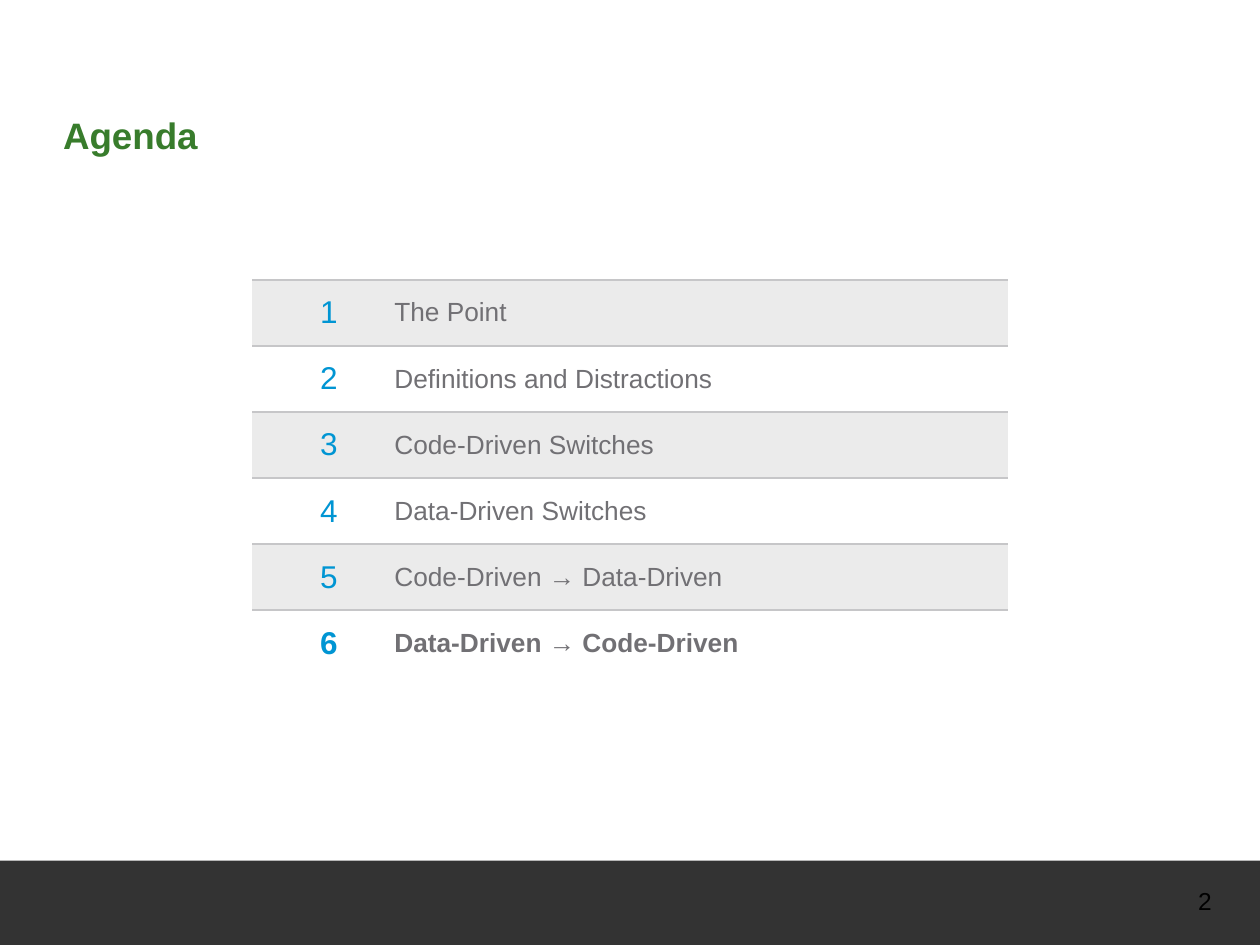
"""Build the agenda slide with its numbered table and footer bar."""
import pptx
import pptx.dml.color
import pptx.enum.shapes
import pptx.enum.text
import pptx.oxml
import pptx.oxml.ns
import pptx.util
from pptx.util import Inches

TITLE = "Agenda"
PAGE_NUMBER = "2"
TOPICS = [
    "The Point",
    "Definitions and Distractions",
    "Code-Driven Switches",
    "Data-Driven Switches",
    "Code-Driven → Data-Driven",
    "Data-Driven → Code-Driven",
]
CURRENT_TOPIC = 6
COLUMN_WIDTHS = (0.83, 5.17)
ROW_HEIGHT = 0.525

THEME = {
    "font": "Arial",
    "title": ("387C2C", 21),
    "number": ("0095D3", 18),
    "topic": ("717074", 15),
    "page": ("000000", 14),
    "bands": ("EBEBEB", "FFFFFF"),
    "rule": "C6C6C8",
    "rule_width": 1.5,
    "footer": "333333",
}
ALIGN = pptx.enum.text.PP_ALIGN
ANCHOR = pptx.enum.text.MSO_ANCHOR


def color(value):
    """Return an RGB colour."""
    return pptx.dml.color.RGBColor.from_string(value)


def write(frame, text, style, align=ALIGN.LEFT, bold=False):
    """Fill a text frame with one styled paragraph."""
    frame.text = text
    para = frame.paragraphs[0]
    para.alignment = align
    para.font.name = THEME["font"]
    value, size = THEME[style]
    para.font.size = pptx.util.Pt(size)
    para.font.color.rgb = color(value)
    para.font.bold = bold
    return para


def clear_margins(frame, anchor):
    """Remove the insets of a text frame and anchor its text."""
    frame.margin_left = frame.margin_right = 0
    frame.margin_top = frame.margin_bottom = 0
    frame.vertical_anchor = anchor
    frame.word_wrap = True


def set_borders(cell, ruled_sides):
    """Rule the given sides of a cell and clear the others."""
    properties = cell._tc.get_or_add_tcPr()
    width = pptx.util.Pt(THEME["rule_width"])
    for index, side in enumerate("LRTB"):
        paint = "<a:noFill/>"
        if side in ruled_sides:
            paint = f'<a:solidFill><a:srgbClr val="{THEME["rule"]}"/></a:solidFill>'
        namespace = pptx.oxml.ns.nsdecls("a")
        line = f'<a:ln{side} {namespace} w="{width}">{paint}</a:ln{side}>'
        properties.insert(index, pptx.oxml.parse_xml(line))


def add_footer(page):
    """Add the dark bar and the page number."""
    bar = page.shapes.add_shape(
        pptx.enum.shapes.MSO_SHAPE.RECTANGLE, 0, Inches(6.83), Inches(10), Inches(0.67)
    )
    bar.shadow.inherit = False
    bar.fill.solid()
    bar.fill.fore_color.rgb = color(THEME["footer"])
    bar.line.fill.background()
    box = page.shapes.add_textbox(Inches(9.51), Inches(7.07), Inches(0.37), Inches(0.16))
    clear_margins(box.text_frame, ANCHOR.MIDDLE)
    write(box.text_frame, PAGE_NUMBER, "page")


def add_title(page):
    """Place and format the title."""
    title = page.shapes.title
    title.left, title.top = Inches(0.5), Inches(0.36)
    title.width, title.height = Inches(9), Inches(0.89)
    clear_margins(title.text_frame, ANCHOR.BOTTOM)
    write(title.text_frame, TITLE, "title", bold=True).line_spacing = 0.9


def add_agenda(page):
    """Add the banded table of numbered topics."""
    count = len(TOPICS)
    table = page.shapes.add_table(
        count, 2, Inches(2), Inches(2.22),
        Inches(sum(COLUMN_WIDTHS)), Inches(count * ROW_HEIGHT),
    ).table
    table.first_row = table.horz_banding = False
    for column, width in zip(table.columns, COLUMN_WIDTHS):
        column.width = Inches(width)
    for index, topic in enumerate(TOPICS):
        number = index + 1
        table.rows[index].height = Inches(ROW_HEIGHT)
        columns = (
            (str(number), "number", ALIGN.RIGHT, 0.15),
            (topic, "topic", ALIGN.LEFT, 0.3),
        )
        for cell, (text, style, align, left) in zip(table.rows[index].cells, columns):
            cell.margin_left, cell.margin_right = Inches(left), Inches(0.15)
            cell.margin_top = cell.margin_bottom = Inches(0.11)
            cell.vertical_anchor = ANCHOR.MIDDLE
            cell.fill.solid()
            cell.fill.fore_color.rgb = color(THEME["bands"][index % 2])
            set_borders(cell, "T" if number == count else "TB")
            write(cell.text_frame, text, style, align, number == CURRENT_TOPIC)


def main():
    """Build and save the deck."""
    deck = pptx.Presentation()
    deck.slide_width, deck.slide_height = Inches(10), Inches(7.5)
    page = deck.slides.add_slide(deck.slide_layouts[5])
    add_title(page)
    add_agenda(page)
    add_footer(page)
    deck.save("out.pptx")


if __name__ == "__main__":
    main()
